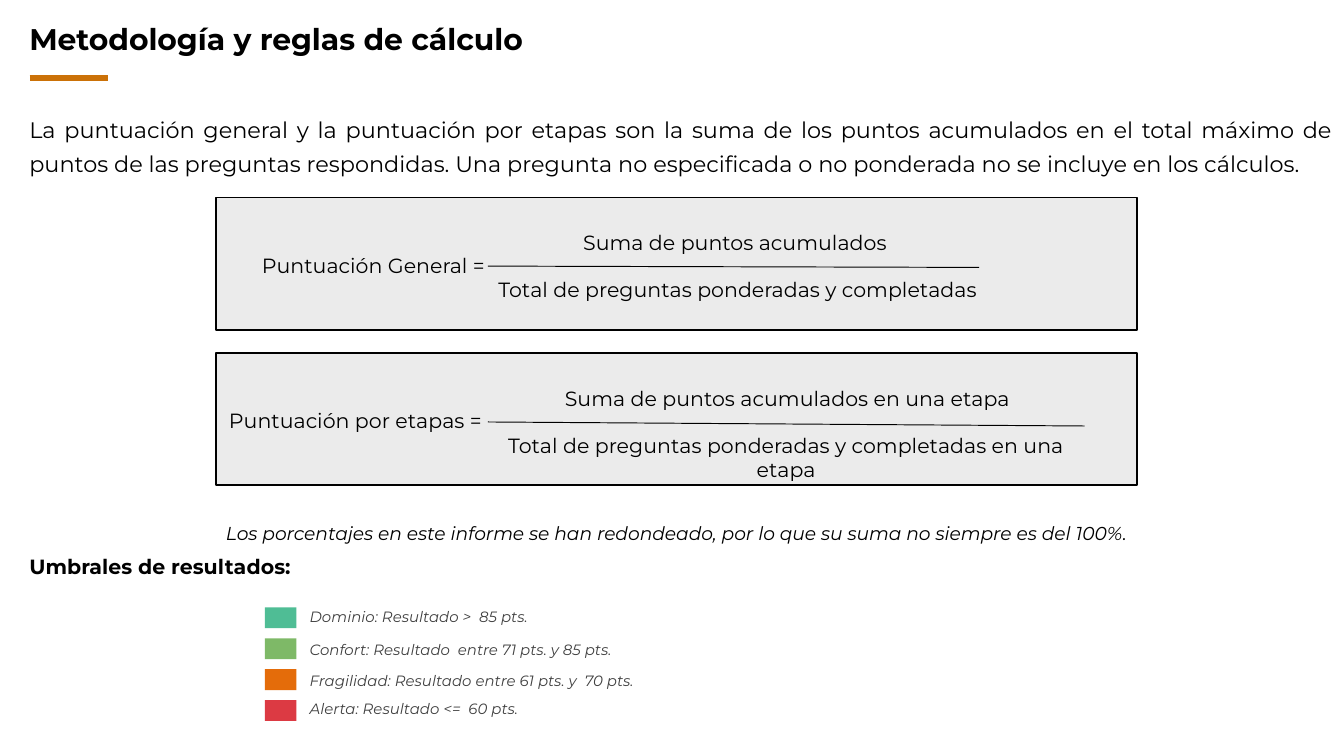
from lxml import etree
from pptx import Presentation
from pptx import util as u
from pptx.dml.color import RGBColor
from pptx.enum import shapes, text
from pptx.oxml.ns import qn

PX = 4572  # 200 px to the inch
FONT = "Montserrat"
COLORS = {
    "ink": "000000", "note": "404040", "panel": "BFBFBF", "accent": "CB7107",
    "dominio": "4FBD95", "confort": "7EB967", "fragilidad": "E46C0A", "alerta": "DC3A43",
}
LEFT, CENTER, JUSTIFY = text.PP_ALIGN.LEFT, text.PP_ALIGN.CENTER, text.PP_ALIGN.JUSTIFY


def px(*values):
    return [u.Emu(v * PX) for v in values]


def rgb(name):
    return RGBColor.from_string(COLORS[name])


def add_text(s, box, words, size, align=LEFT, color="ink", bold=False, italic=False, spacing=None):
    tf = s.shapes.add_textbox(*px(*box)).text_frame
    tf.word_wrap = True
    p = tf.paragraphs[0]
    p.text = words
    p.alignment = align
    if spacing:
        p.line_spacing = spacing
    f = p.font
    f.name, f.size, f.bold, f.italic = FONT, u.Pt(size), bold, italic
    f.color.rgb = rgb(color)
    return p


def add_line(s, x1, y1, x2, y2, color, width):
    line = s.shapes.add_connector(shapes.MSO_CONNECTOR.STRAIGHT, *px(x1, y1, x2, y2))
    line.line.color.rgb = rgb(color)
    line.line.width = u.Pt(width)
    etree.SubElement(line._element.spPr, qn("a:effectLst"))


def add_rect(s, box, color, alpha=None, outline=False):
    sp = s.shapes.add_shape(shapes.MSO_SHAPE.RECTANGLE, *px(*box))
    sp.shadow.inherit = False
    sp.fill.solid()
    sp.fill.fore_color.rgb = rgb(color)
    if alpha:
        clr = sp._element.spPr.find(qn("a:solidFill"))[0]
        etree.SubElement(clr, qn("a:alpha"), val=str(alpha * 1000))
    if outline:
        sp.line.color.rgb = rgb("ink")
        sp.line.width = u.Pt(1)
    else:
        sp.line.fill.background()


def header(s, x, y, w):
    add_line(s, x + 20, y + 89, x + 136, y + 89, "accent", 3)
    add_text(s, (x, y, w, 94), "Metodología y reglas de cálculo", 16, bold=True, spacing=0.9)


def intro(s, x, y, w, h):
    p = add_text(
        s, (x, y, w, h),
        "La puntuación general y la puntuación por etapas son la suma de los puntos "
        "acumulados en el total máximo de puntos de las preguntas respondidas. Una pregunta "
        "no especificada o no ponderada no se incluye en los cálculos.",
        12, JUSTIFY, spacing=1.25)
    pPr = p._p.get_or_add_pPr()
    pPr.set("marL", str(20 * PX))
    pPr.set("indent", "0")


def formula(s, x, y, w, h, label, numerator, denominator, bar):
    """Each part is its words and a box relative to the panel; bar is a line."""
    add_rect(s, (x, y, w, h), "panel", alpha=31, outline=True)
    for (words, (dx, dy, pw, ph)), align in zip(
            (label, numerator, denominator), (LEFT, CENTER, CENTER)):
        add_text(s, (x + dx, y + dy, pw, ph), words, 11, align)
    x1, y1, x2, y2 = bar
    add_line(s, x + x1, y + y1, x + x2, y + y2, "ink", 0.5)


def thresholds(s, x, y, step):
    rows = [  # swatch colour, words, label offset above the swatch
        ("dominio", "Dominio: Resultado >  85 pts.", 10),
        ("confort", "Confort: Resultado  entre 71 pts. y 85 pts.", 6),
        ("fragilidad", "Fragilidad: Resultado entre 61 pts. y  70 pts.", 7),
        ("alerta", "Alerta: Resultado <=  60 pts.", 10),
    ]
    for i, (color, words, rise) in enumerate(rows):
        top = y + i * step
        add_rect(s, (x, top, 47, 31), color)
        add_text(s, (x + 47, top - rise, 544, 48), words, 8, color="note", italic=True)


def main():
    prs = Presentation()
    prs.slide_width, prs.slide_height = px(2000, 1125)
    s = prs.slides.add_slide(prs.slide_layouts[6])

    # Title and introduction
    header(s, 24, 27, 1952)
    intro(s, 4, 153, 2000, 116)

    # Formulas
    formula(s, 322, 294, 1370, 197,
            ("Puntuación General =", (48, 72, 394, 58)),
            ("Suma de puntos acumulados", (406, 39, 732, 58)),
            ("Total de preguntas ponderadas y completadas", (348, 108, 856, 58)),
            (404, 102, 1135, 104))
    formula(s, 322, 525, 1370, 197,
            ("Puntuación por etapas =", (-1, 72, 442, 58)),
            ("Suma de puntos acumulados en una etapa", (406, 40, 888, 58)),
            ("Total de preguntas ponderadas y completadas en una etapa", (388, 109, 920, 94)),
            (404, 103, 1292, 109))

    # Rounding note and result thresholds
    add_text(s, (128, 767, 1756, 54),
             "Los porcentajes en este informe se han redondeado, por lo que su suma "
             "no siempre es del 100%.", 10, CENTER, italic=True)
    add_text(s, (24, 815, 662, 58), "Umbrales de resultados:", 11, bold=True)
    thresholds(s, 394, 904, 46)

    prs.save("out.pptx")


if __name__ == "__main__":
    main()
